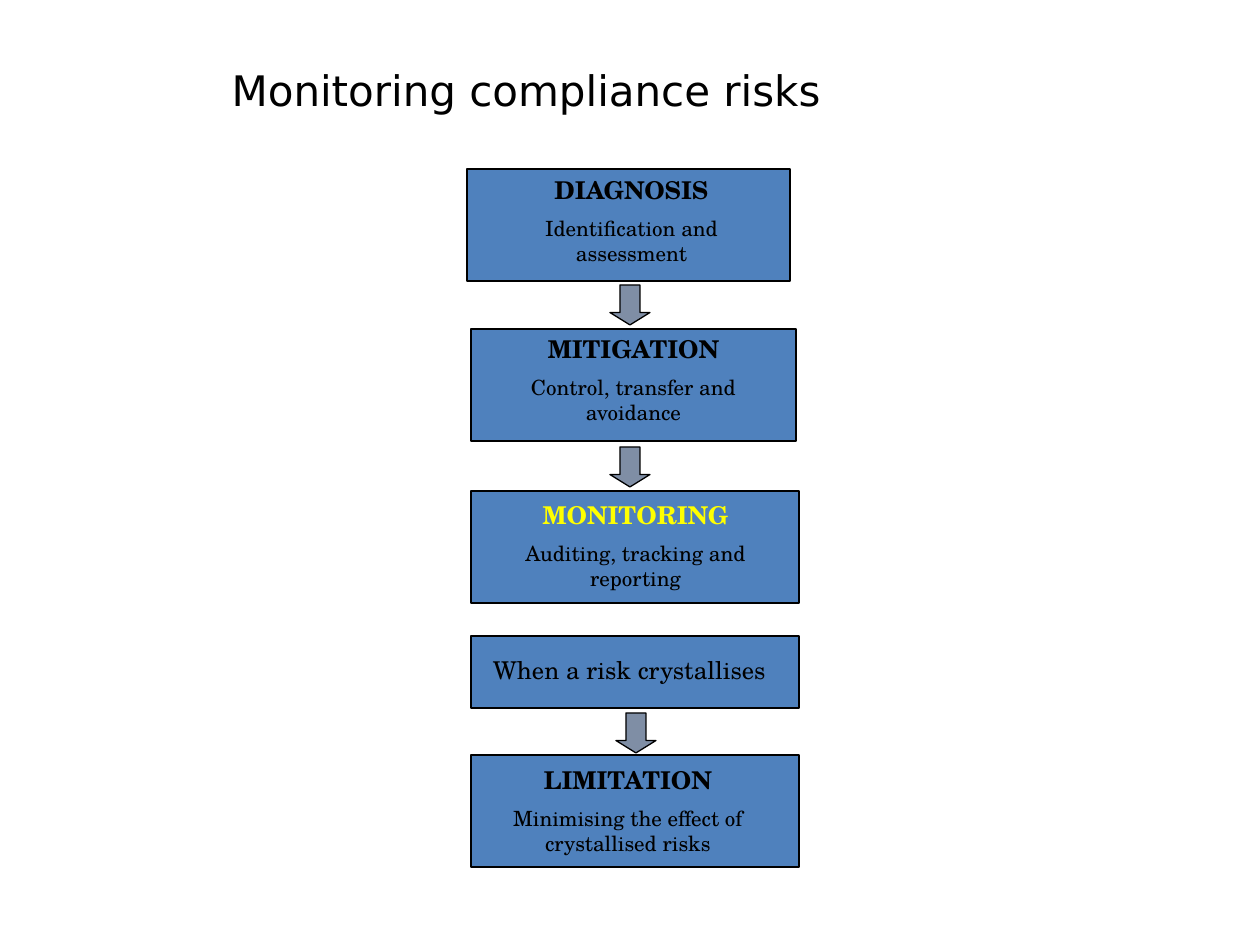
import pptx
import pptx.dml.color
import pptx.enum.shapes
import pptx.enum.text
import pptx.util

PX = 914400 / 126
SERIF = "TeX Gyre Schola"
SHAPES = pptx.enum.shapes.MSO_SHAPE
ALIGN = pptx.enum.text.PP_ALIGN


def px(length):
    return pptx.util.Emu(round(length * PX))


def colour(value):
    return pptx.dml.color.RGBColor.from_string(value)


def write(para, text, font=SERIF, size=14, bold=False, fill="000000",
          align=ALIGN.CENTER, before=0):
    para.alignment = align
    para.space_before = pptx.util.Pt(before)
    span = para.add_run()
    span.text = text
    span.font.name = font
    span.font.size = pptx.util.Pt(size)
    span.font.bold = bold
    span.font.color.rgb = colour(fill)


def draw_shape(page, kind, box, fill):
    shape = page.shapes.add_shape(kind, *map(px, box))
    shape.shadow.inherit = False
    shape.fill.solid()
    shape.fill.fore_color.rgb = colour(fill)
    shape.line.color.rgb = colour("000000")
    shape.line.width = pptx.util.Pt(0.75)
    return shape


def draw_title(page, box, text):
    title = page.shapes.title
    title.left, title.top, title.width, title.height = map(px, box)
    frame = title.text_frame
    frame.vertical_anchor = pptx.enum.text.MSO_ANCHOR.MIDDLE
    write(frame.paragraphs[0], text, font="DejaVu Sans", size=24, align=ALIGN.LEFT)


def draw_stage(page, box, inset, heading, detail=None, fill="000000"):
    left, top, width, height = box
    shift, drop, caption_width = inset
    draw_shape(page, SHAPES.RECTANGLE, box, "4F81BD")
    caption = page.shapes.add_textbox(
        px(left + shift), px(top + drop), px(caption_width), px(height - drop))
    frame = caption.text_frame
    frame.word_wrap = True
    write(frame.paragraphs[0], heading, bold=detail is not None, fill=fill)
    if detail:
        write(frame.add_paragraph(), detail, size=12, before=6)


def draw_arrow(page, box):
    arrow = draw_shape(page, SHAPES.DOWN_ARROW, box, "7F8EA5")
    arrow.adjustments[0] = 0.5
    arrow.adjustments[1] = 0.31


def main():
    deck = pptx.Presentation()
    deck.slide_width, deck.slide_height = px(1260), px(945)
    page = deck.slides.add_slide(deck.slide_layouts[5])
    draw_title(page, (219, 45, 990, 89), "Monitoring compliance risks")

    draw_stage(page, (467, 169, 323, 112), (24, 0, 281),
               "DIAGNOSIS", "Identification and assessment")
    draw_stage(page, (471, 329, 325, 112), (22, -1, 281),
               "MITIGATION", "Control, transfer and avoidance")
    draw_stage(page, (471, 491, 328, 112), (-1, 3, 331),
               "MONITORING", "Auditing, tracking and reporting", fill="FFFF00")
    draw_stage(page, (471, 636, 328, 72), (-2, 13, 321),
               "When a risk crystallises")
    draw_stage(page, (471, 755, 328, 112), (-12, 4, 338),
               "LIMITATION", "Minimising the effect of crystallised risks")

    for left, top in ((610, 285), (610, 447), (616, 713)):
        draw_arrow(page, (left, top, 40, 40))

    deck.save("out.pptx")


if __name__ == "__main__":
    main()
